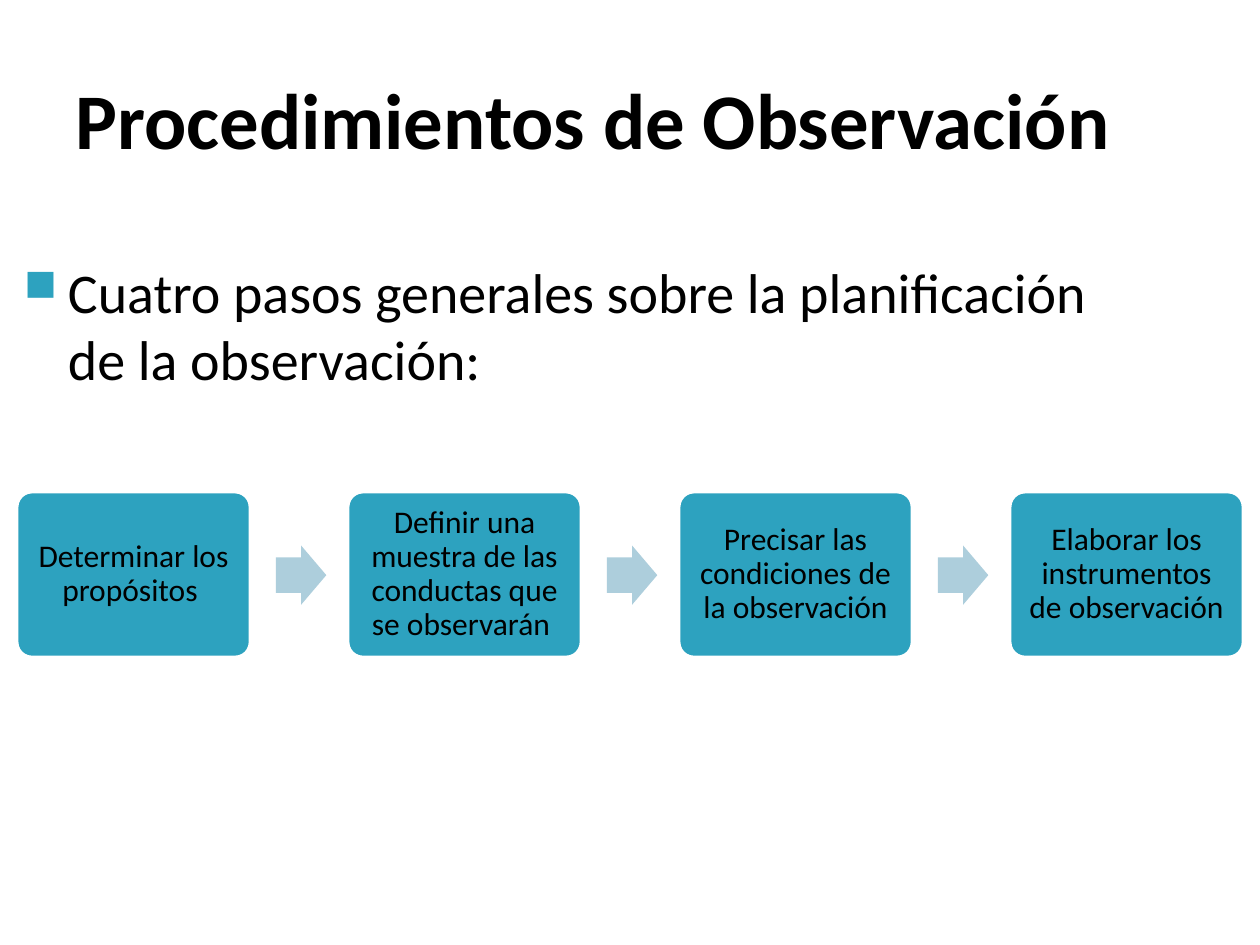
from dataclasses import dataclass

from lxml import etree
from pptx import Presentation
from pptx import util as u
from pptx.dml.color import RGBColor
from pptx.enum import shapes, text
from pptx.oxml import ns

COLORS = {"teal": "2DA2BF", "arrow": "ADCEDC", "white": "FFFFFF", "black": "000000"}
STEPS = [
    "Determinar los propósitos ",
    "Definir una muestra de las conductas que se observarán ",
    "Precisar las condiciones de la observación",
    "Elaborar los instrumentos de observación ",
]
STEP_LEFT, STEP_PITCH, ARROW_OFFSET = 0.12, 2.627, 2.07


@dataclass
class Box:
    left: float
    top: float
    width: float
    height: float

    def lengths(self) -> list:
        return [u.Inches(v) for v in (self.left, self.top, self.width, self.height)]


def rgb(name: str) -> RGBColor:
    return RGBColor.from_string(COLORS[name])


def write(sp, content: str, size: float, insets: tuple, anchor, bold: bool = False):
    """Fill a shape with one paragraph; insets run left, top, right, bottom."""
    tf = sp.text_frame
    frame = {"word_wrap": True, "vertical_anchor": anchor}
    for side, inset in zip(("left", "top", "right", "bottom"), insets):
        frame[f"margin_{side}"] = u.Inches(inset)
    for name, value in frame.items():
        setattr(tf, name, value)
    p = tf.paragraphs[0]
    r = p.add_run()
    r.text = content
    for name, value in {"name": "Calibri", "size": u.Pt(size), "bold": bold}.items():
        setattr(r.font, name, value)
    r.font.color.rgb = rgb("black")
    return p


def add_bullet(p) -> None:
    """Give the paragraph a hanging square bullet."""
    pPr = p._p.get_or_add_pPr()
    pPr.set("marL", str(u.Inches(0.48)))
    pPr.set("indent", str(u.Inches(-0.35)))
    color = etree.SubElement(pPr, ns.qn("a:buClr"))
    etree.SubElement(color, ns.qn("a:srgbClr"), val=COLORS["teal"])
    etree.SubElement(pPr, ns.qn("a:buSzPct"), val="80000")
    etree.SubElement(pPr, ns.qn("a:buChar"), char="■")


def add_block(parent, kind, box: Box, fill: str, adjustments: tuple):
    sp = parent.shapes.add_shape(kind, *box.lengths())
    sp.shadow.inherit = False
    sp.fill.solid()
    sp.fill.fore_color.rgb = rgb(fill)
    sp.line.fill.background()
    for i, value in enumerate(adjustments):
        sp.adjustments[i] = value
    return sp


def add_step(parent, left: float, label: str) -> None:
    sp = add_block(parent, shapes.MSO_SHAPE.ROUNDED_RECTANGLE,
                   Box(left, 3.89, 1.88, 1.34), "teal", (0.1,))
    sp.line.color.rgb = rgb("white")
    sp.line.width = u.Pt(3.78)
    p = write(sp, label, 18, (0.11,) * 4, text.MSO_ANCHOR.MIDDLE)
    p.alignment = text.PP_ALIGN.CENTER
    p.line_spacing = 0.9


def main() -> None:
    prs = Presentation()
    prs.slide_width, prs.slide_height = u.Inches(10), u.Inches(7.5)
    s = prs.slides.add_slide(prs.slide_layouts[6])

    title = s.shapes.add_textbox(*Box(0.5, 0.25, 9, 1.37).lengths())
    write(title, "Procedimientos de Observación", 45, (0.1, 0.05, 0.05, 0.05),
          text.MSO_ANCHOR.MIDDLE, bold=True)
    body = s.shapes.add_textbox(*Box(0, 1.94, 9, 5.06).lengths())
    add_bullet(write(
        body, "Cuatro pasos generales sobre la planificación de la observación:",
        32, (0.06, 0.1, 0.1, 0.05), text.MSO_ANCHOR.TOP))

    process = s.shapes.add_group_shape()
    for i, label in enumerate(STEPS):
        left = STEP_LEFT + i * STEP_PITCH
        add_step(process, left, label)
        if i < len(STEPS) - 1:
            add_block(process, shapes.MSO_SHAPE.RIGHT_ARROW,
                      Box(left + ARROW_OFFSET, 4.33, 0.4, 0.47), "arrow", (0.6, 0.5))

    prs.save("out.pptx")


if __name__ == "__main__":
    main()
